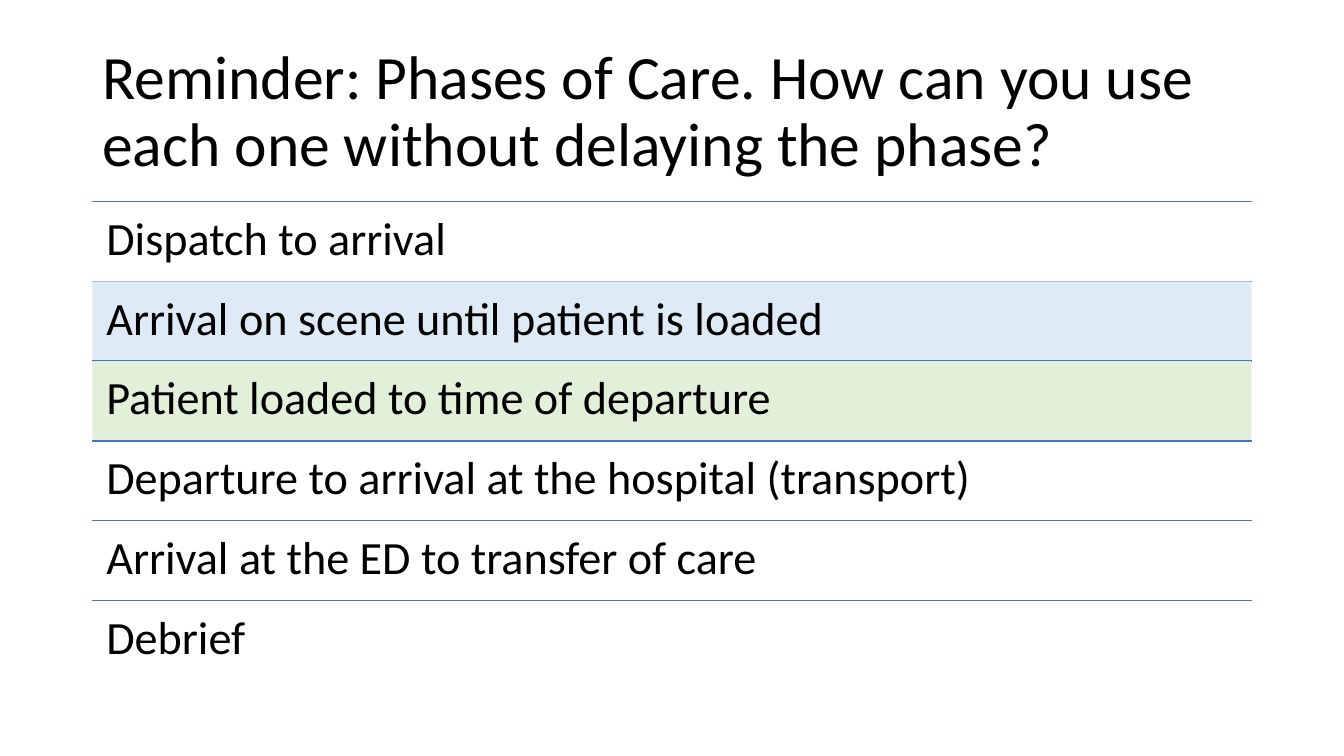
from lxml import etree
from pptx import Presentation
from pptx.dml.color import RGBColor
from pptx.enum.shapes import MSO_CONNECTOR
from pptx.enum.text import MSO_ANCHOR
from pptx.oxml.ns import qn
from pptx.util import Cm, Pt

STRAIGHT = MSO_CONNECTOR.STRAIGHT
TOP, MIDDLE = MSO_ANCHOR.TOP, MSO_ANCHOR.MIDDLE

LEFT, WIDTH = 2.33, 29.21
FIRST_ROW_TOP, ROW_HEIGHT = 5.08, 2.01

# Each phase of care with its row tint
PHASES = [
    ("Dispatch to arrival", None),
    ("Arrival on scene until patient is loaded", "DEEBF7"),
    ("Patient loaded to time of departure", "E2F0D9"),
    ("Departure to arrival at the hospital (transport)", None),
    ("Arrival at the ED to transfer of care", None),
    ("Debrief", None),
]


def color(hex_string):
    return RGBColor.from_string(hex_string)


def add_text(top, height, text, size, anchor):
    box = slide.shapes.add_textbox(Cm(LEFT), Cm(top), Cm(WIDTH), Cm(height))
    frame = box.text_frame
    frame.word_wrap = True
    frame.vertical_anchor = anchor
    paragraph = frame.paragraphs[0]
    paragraph.text = text
    paragraph.line_spacing = 0.9
    paragraph.font.name = "Calibri"
    paragraph.font.size = Pt(size)
    paragraph.font.color.rgb = color("000000")
    return box


presentation = Presentation()
presentation.slide_width, presentation.slide_height = Cm(33.87), Cm(19.05)
slide = presentation.slides.add_slide(presentation.slide_layouts[6])

# Title
add_text(1.01, 3.68,
         "Reminder: Phases of Care. How can you use each one without delaying the phase?",
         44, MIDDLE)

# Phase rows, each under a rule
for index, (phase, tint) in enumerate(PHASES):
    top = FIRST_ROW_TOP + index * ROW_HEIGHT

    rule = slide.shapes.add_connector(
        STRAIGHT, Cm(LEFT), Cm(top), Cm(LEFT + WIDTH), Cm(top))
    rule.line.color.rgb = color("4472C4")
    rule.line.width = Pt(1)
    etree.SubElement(rule._element.spPr, qn("a:effectLst"))

    row = add_text(top, ROW_HEIGHT, phase, 33, TOP)
    frame = row.text_frame
    frame.margin_left = frame.margin_right = Cm(0.35)
    frame.margin_top = frame.margin_bottom = Cm(0.35)
    if tint:
        row.fill.solid()
        row.fill.fore_color.rgb = color(tint)

presentation.save("out.pptx")
